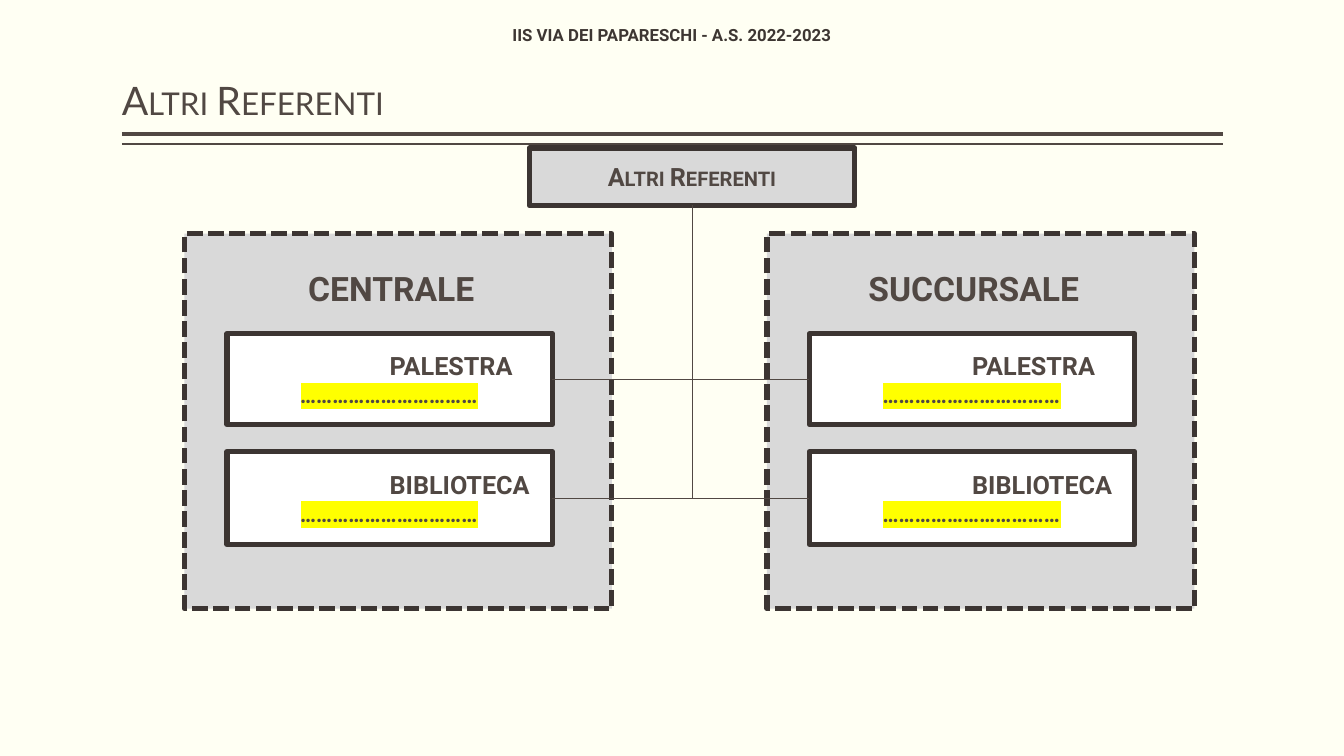
from dataclasses import dataclass

from lxml import etree
from pptx import Presentation
from pptx.dml.color import RGBColor
from pptx.enum import dml, shapes, text
from pptx.oxml import ns
from pptx.util import Cm, Pt


@dataclass(frozen=True)
class Theme:
    paper: str = "FFFFF3"
    ink: str = "514843"
    border: str = "3C3532"
    banner: str = "3D3632"
    panel: str = "D9D9D9"
    card: str = "FFFFFF"
    marker: str = "FFFF00"
    title_font: str = "Lato"
    body_font: str = "Roboto"
    title_size: int = 28
    panel_size: int = 24
    card_size: int = 18
    name_size: int = 16
    banner_size: int = 12
    border_width: float = 3.78
    link_width: float = 0.5


THEME = Theme()
BLANK_NAME = "……………………………"
SITES = ("CENTRALE", "SUCCURSALE")
# Role, top and height of its card in cm
ROLES = (("PALESTRA", 8.41, 2.29), ("BIBLIOTECA", 11.38, 2.34))
LEFT_SITE, BOTTOM_SITE, RIGHT_SITE = 1, 2, 3


def rgb(value):
    return RGBColor.from_string(value)


def style_text(p, size, color=THEME.ink, font=THEME.body_font, bold=True,
               small_caps=False, italic=False, highlight=None):
    for r in p.runs:
        r.font.size = Pt(size)
        r.font.name = font
        r.font.bold = bold
        r.font.italic = italic
        r.font.color.rgb = rgb(color)
        rpr = r.font._element
        if small_caps:
            rpr.set("cap", "small")
        if highlight:
            mark = etree.Element(ns.qn("a:highlight"))
            etree.SubElement(mark, ns.qn("a:srgbClr"), val=highlight)
            rpr.find(ns.qn("a:solidFill")).addnext(mark)


def add_label(s, words, box, size, align=text.PP_ALIGN.CENTER,
              anchor=text.MSO_ANCHOR.TOP, side_inset=0.25, **look):
    tf = s.shapes.add_textbox(*map(Cm, box)).text_frame
    tf.word_wrap = True
    tf.vertical_anchor = anchor
    tf.margin_left = tf.margin_right = Cm(side_inset)
    p = tf.paragraphs[0]
    p.text = words
    p.alignment = align
    style_text(p, size, **look)
    return p


def add_box(s, box, fill, dashed=False):
    sp = s.shapes.add_shape(shapes.MSO_SHAPE.RECTANGLE, *map(Cm, box))
    sp.shadow.inherit = False
    sp.fill.solid()
    sp.fill.fore_color.rgb = rgb(fill)
    sp.line.color.rgb = rgb(THEME.border)
    sp.line.width = Pt(THEME.border_width)
    if dashed:
        sp.line.dash_style = dml.MSO_LINE.SQUARE_DOT
    return sp


def add_card(s, box, fill, heading, name=None):
    sp = add_box(s, box, fill)
    tf = sp.text_frame
    tf.word_wrap = True
    tf.vertical_anchor = text.MSO_ANCHOR.MIDDLE
    tf.text = f"{heading}\n{name}" if name else heading
    for p in tf.paragraphs:
        p.alignment = text.PP_ALIGN.CENTER
    style_text(tf.paragraphs[0], THEME.card_size, small_caps=True)
    for p in tf.paragraphs[1:]:
        style_text(p, THEME.name_size, italic=True, highlight=THEME.marker)
    return sp


def add_line(s, kind, ends, width):
    line = s.shapes.add_connector(kind, *map(Cm, ends))
    line.line.color.rgb = rgb(THEME.ink)
    line.line.width = Pt(width)
    etree.SubElement(line._element.spPr, ns.qn("a:effectLst"))
    return line


def link_card(s, card, site, header):
    """Run sideways from the card, then up to the foot of the header."""
    link = add_line(s, shapes.MSO_CONNECTOR.ELBOW, (0, 0, 1, 1), THEME.link_width)
    link._element.spPr.find(ns.qn("a:prstGeom")).set("prst", "bentConnector2")
    link.begin_connect(card, site)
    link.end_connect(header, BOTTOM_SITE)


def main():
    prs = Presentation()
    prs.slide_width, prs.slide_height = Cm(33.87), Cm(19.05)
    s = prs.slides.add_slide(prs.slide_layouts[6])
    s.background.fill.solid()
    s.background.fill.fore_color.rgb = rgb(THEME.paper)

    # Banner, title and double rule
    add_label(s, "IIS VIA DEI PAPARESCHI - A.S. 2022-2023", (0, 0.38, 33.87, 1.02),
              THEME.banner_size, anchor=text.MSO_ANCHOR.MIDDLE, side_inset=0,
              color=THEME.banner)
    title = add_label(s, "Altri Referenti", (3.07, 0.2, 27.74, 3.05),
                      THEME.title_size, align=text.PP_ALIGN.LEFT,
                      anchor=text.MSO_ANCHOR.BOTTOM, side_inset=0,
                      font=THEME.title_font, bold=False, small_caps=True)
    title.line_spacing = 0.9
    for y, width in ((3.38, 3), (3.63, 1)):
        add_line(s, shapes.MSO_CONNECTOR.STRAIGHT, (3.07, y, 30.81, y), width)

    # One dashed panel per site, with a card per role
    cards = []
    for i, (site, side) in enumerate(zip(SITES, (RIGHT_SITE, LEFT_SITE))):
        left = 4.65 + 14.68 * i
        inner = left + 1.07
        add_box(s, (left, 5.89, 10.77, 9.45), THEME.panel, dashed=True)
        add_label(s, site, (inner, 6.63, 8.28, 1.27), THEME.panel_size)
        for role, top, height in ROLES:
            card = add_card(s, (inner, top, 8.2, height), THEME.card, role, BLANK_NAME)
            cards.append((card, side))

    # Header and its links to the cards
    header = add_card(s, (13.34, 3.73, 8.2, 1.45), THEME.panel, "Altri Referenti")
    for card, side in cards:
        link_card(s, card, side, header)

    prs.save("out.pptx")


if __name__ == "__main__":
    main()
